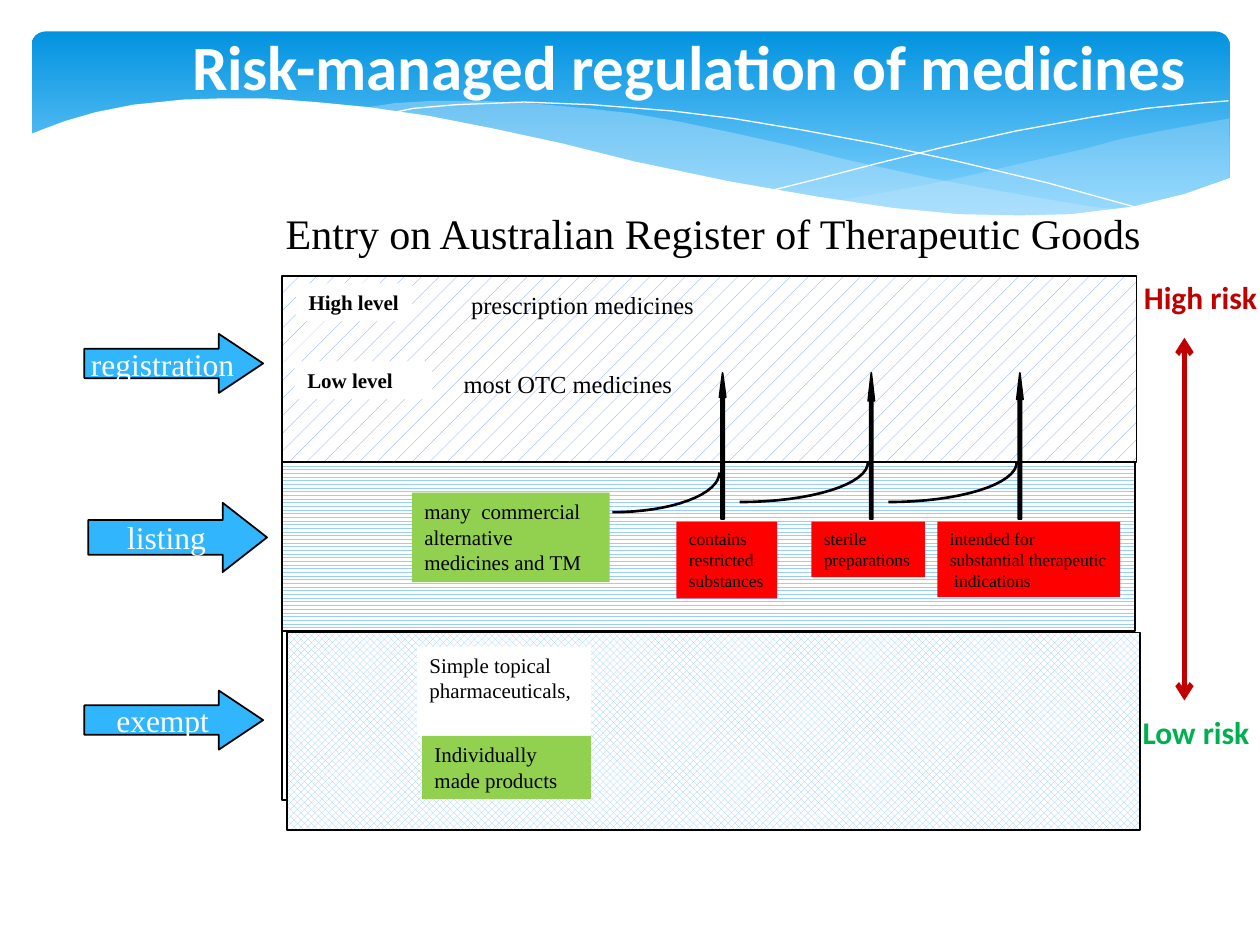
import math

from lxml import etree
from pptx import Presentation
from pptx import util as u
from pptx.dml.color import RGBColor
from pptx.enum import dml, shapes, text
from pptx.oxml.ns import qn

Pt = u.Pt
COLOURS = {
    "white": "FFFFFF", "black": "000000", "banner_top": "0293E0",
    "banner_bottom": "83D3FE", "wave": "C6E7FC", "arrow": "31B6FD",
    "blue_line": "6699FF", "pale_blue": "99CCFF", "green": "92D050",
    "red": "FF0000", "high_risk": "C00000", "low_risk": "00B050",
}
SERIF, SANS = "Times New Roman", "Calibri"

WAVE_RIGHT = [
    (702.5, 67.7), (682.6, 71.3), (663.1, 74.9), (641.5, 79.2), (619.9, 85),
    (579.6, 94.3), (542.2, 103), (508.3, 109.4), (475.9, 115.2), (497.5, 118.1),
    (527, 121), (553.7, 123.1), (578.2, 123.8), (601.2, 123.8), (627.8, 121.7),
    (651.6, 117.4), (673.2, 112.3), (702.7, 101.5)]
WAVE_MIDDLE = [
    (643, 120.2), (623.5, 118.1), (581, 110.9), (533.5, 102.2), (481, 90.7),
    (452.9, 83.5), (420.5, 76.3), (389.5, 69.8), (361.4, 64.8), (334.8, 61.9),
    (302.4, 59), (273.6, 57.6), (247.7, 57.6), (225.4, 59), (205.9, 61.9),
    (232.6, 64.8), (260.6, 69.8), (290.9, 76.3), (323.3, 83.5), (381.6, 97.2),
    (420.5, 105.1), (456.5, 112.3), (489.6, 117.4), (519.8, 121), (547.9, 123.1),
    (573.1, 124.6), (596.2, 124.6), (617, 123.1)]
WAVE_FRONT = [
    (703.4, 101.5), (676.8, 110.9), (647.3, 118.1), (612, 122.4), (582.5, 123.1),
    (547.9, 122.4), (509.8, 118.8), (466.6, 112.3), (416.9, 103.7), (362.2, 92.2),
    (321.8, 82.1), (281.5, 73.4), (244.8, 66.2), (210.2, 61.2), (180, 58.3),
    (151.9, 56.2), (127.4, 56.2), (105.1, 56.9), (76.3, 59.8), (54.7, 64.1),
    (37.4, 69.1), (25.9, 73.4), (16.6, 77), (16.6, 161.3), (703.4, 161.3)]
THREAD_FALLING = [
    (222.5, 64.8), (236.2, 61.9), (261.4, 59.8), (299.5, 58.3), (337.7, 59.8),
    (383.8, 63.4), (419, 67.7), (457.9, 74.2), (500.4, 82.1), (547.2, 92.2),
    (598.3, 104.4), (653, 119.5)]
THREAD_RISING = [
    (441.4, 108.7), (470.2, 101.5), (500.4, 93.6), (538.6, 84.2), (580.3, 74.9),
    (623.5, 67), (655.2, 61.9), (684.7, 59), (702, 57.6)]


def rgb(name):
    return RGBColor.from_string(COLOURS[name])


def paint(shape, fill=None, line=None, width=1):
    shape.shadow.inherit = False
    if fill:
        shape.fill.solid()
        shape.fill.fore_color.rgb = rgb(fill)
    else:
        shape.fill.background()
    if line:
        shape.line.color.rgb = rgb(line)
        shape.line.width = Pt(width)
    else:
        shape.line.fill.background()


def add_block(slide, kind, box, **look):
    block = slide.shapes.add_shape(kind, *map(Pt, box))
    paint(block, **look)
    return block


def add_outline(slide, points, closed=False, alpha=None, **look):
    (start, *rest) = [(Pt(x), Pt(y)) for x, y in points]
    builder = slide.shapes.build_freeform(*start)
    builder.add_line_segments(rest, close=closed)
    outline = builder.convert_to_shape()
    paint(outline, **look)
    if alpha:
        colour = outline.fill._xPr.find(qn("a:solidFill"))[0]
        etree.SubElement(colour, qn("a:alpha")).set("val", str(alpha * 1000))


def write(shape, words, size, colour="black", font=SERIF, bold=False, wrap=True,
          grow=True, align=text.PP_ALIGN.LEFT, anchor=text.MSO_ANCHOR.TOP):
    frame = shape.text_frame
    frame.text = words
    frame.word_wrap = wrap
    frame.vertical_anchor = anchor
    frame.auto_size = (text.MSO_AUTO_SIZE.SHAPE_TO_FIT_TEXT if grow
                       else text.MSO_AUTO_SIZE.NONE)
    for paragraph in frame.paragraphs:
        paragraph.alignment = align
        for run in paragraph.runs:
            run.font.size = Pt(size)
            run.font.name = font
            run.font.bold = bold
            run.font.color.rgb = rgb(colour)


def add_label(slide, box, words, size, fill=None, **style):
    if fill:
        label = add_block(slide, shapes.MSO_SHAPE.RECTANGLE, box, fill=fill)
    else:
        label = slide.shapes.add_textbox(*map(Pt, box))
    write(label, words, size, **style)


def add_band(slide, box, pattern, ink):
    band = add_block(slide, shapes.MSO_SHAPE.RECTANGLE, box, line="black")
    band.fill.patterned()
    band.fill.pattern = pattern
    band.fill.fore_color.rgb = rgb(ink)
    band.fill.back_color.rgb = rgb("white")


def add_route(slide, box, words, head):
    route = add_block(slide, shapes.MSO_SHAPE.RIGHT_ARROW, box,
                      fill="arrow", line="black")
    route.adjustments[1] = head
    write(route, words, 18, colour="white", wrap=False, grow=False,
          align=text.PP_ALIGN.CENTER, anchor=text.MSO_ANCHOR.MIDDLE)


def add_upgrade(slide, left, head):
    stem = add_block(slide, shapes.MSO_SHAPE.UP_ARROW, (left, 213.1, 3.6, 83.5),
                     fill="black", line="black")
    stem.adjustments[1] = head


def add_curve(slide, left, top, width, height, steps=16):
    angles = [math.pi / 2 * step / steps for step in range(steps + 1)]
    add_outline(slide, [(left + width * math.sin(a), top + height * math.cos(a))
                        for a in angles], line="black", width=1.5)


def add_banner(slide):
    banner = add_block(slide, shapes.MSO_SHAPE.ROUNDED_RECTANGLE,
                       (18, 18, 684.7, 112.3))
    banner.adjustments[0] = 0.071
    banner.fill.gradient()
    banner.fill.gradient_angle = 270
    for stop, colour, position in zip(banner.fill.gradient_stops,
                                      ("banner_top", "banner_bottom"), (0, 0.9)):
        stop.color.rgb = rgb(colour)
        stop.position = position
    add_outline(slide, WAVE_RIGHT, closed=True, fill="wave", alpha=29)
    add_outline(slide, WAVE_MIDDLE, closed=True, fill="wave", alpha=40)
    for thread in (THREAD_FALLING, THREAD_RISING):
        add_outline(slide, thread, line="white", width=0)
    add_outline(slide, WAVE_FRONT, closed=True, fill="white")


def add_risk_scale(slide):
    scale = slide.shapes.add_connector(shapes.MSO_CONNECTOR.STRAIGHT,
                                       Pt(676.8), Pt(193), Pt(676.8), Pt(400.3))
    scale.line.color.rgb = rgb("high_risk")
    scale.line.width = Pt(3)
    for end in ("a:headEnd", "a:tailEnd"):
        etree.SubElement(scale.line._get_or_add_ln(), qn(end)).set("type", "arrow")
    etree.SubElement(scale._element.spPr, qn("a:effectLst"))


def main():
    deck = Presentation()
    deck.slide_width, deck.slide_height = Pt(720), Pt(540)
    slide = deck.slides.add_slide(deck.slide_layouts[6])
    pattern = dml.MSO_PATTERN

    add_banner(slide)
    add_block(slide, shapes.MSO_SHAPE.RECTANGLE, (161.3, 360.7, 447.8, 96.5),
              line="black")
    add_band(slide, (161.3, 264.2, 487.4, 96.5), pattern.ZIG_ZAG, "pale_blue")
    add_band(slide, (161.3, 157.7, 488.2, 106.5), pattern.PERCENT_5, "blue_line")
    add_band(slide, (164.2, 361.4, 487.4, 113), pattern.LARGE_CHECKER_BOARD,
             "pale_blue")

    add_label(slide, (169.2, 162, 66.2, 21.6), "High level", 12, "white",
              bold=True, wrap=False)
    add_label(slide, (168.5, 206.6, 78.5, 21.6), "Low level", 12, "white", bold=True)
    add_label(slide, (262.1, 162, 143.3, 24.5), "prescription medicines", 14)
    add_label(slide, (257.8, 207.4, 136.1, 24.5), "most OTC medicines", 14)
    add_label(slide, (235.4, 281.5, 113, 51.1),
              "many  commercial alternative medicines and TM", 12, "green")
    add_label(slide, (238.3, 369.4, 99.4, 51.1),
              "Simple topical\npharmaceuticals,", 12, "white")
    add_label(slide, (241.2, 420.5, 96.5, 36), "Individually made products", 12,
              "green")
    for left, width, height, words in (
            (386.6, 57.6, 43.9, "contains\nrestricted\nsubstances"),
            (463.7, 64.8, 31.7, "sterile\npreparations"),
            (535.7, 104.4, 43.2,
             "intended for\nsubstantial therapeutic\n indications")):
        add_label(slide, (left, 298.1, width, height), words, 10, "red", wrap=False)

    for left, top, height, words, head in (
            (48.2, 190.8, 33.8, "registration", 0.75),
            (50.4, 287.3, 39.6, "listing", 0.64),
            (48.2, 394.6, 33.8, "exempt", 0.75)):
        add_route(slide, (left, top, 102.2, height), words, head)

    for curve in ((349.9, 270, 61.2, 22.7), (422.6, 264.2, 73.4, 22.7),
                  (507.6, 264.2, 73.4, 22.7)):
        add_curve(slide, *curve)
    for left, head in ((411.1, 3.86), (496.1, 4.44), (581, 4.2)):
        add_upgrade(slide, left, head)

    add_label(slide, (67.7, -7.9, 652.3, 90), "Risk-managed regulation of medicines",
              36, colour="white", font=SANS, bold=True, grow=False,
              align=text.PP_ALIGN.CENTER, anchor=text.MSO_ANCHOR.MIDDLE)
    add_label(slide, (156.2, 115.2, 504.7, 36),
              "Entry on Australian Register of Therapeutic Goods", 24)
    add_label(slide, (646.6, 155.5, 93.6, 28.8), "High risk", 18,
              colour="high_risk", font=SANS, bold=True)
    add_label(slide, (645.8, 403.9, 94.3, 28.8), "Low risk", 18,
              colour="low_risk", font=SANS, bold=True)
    add_risk_scale(slide)
    deck.save("out.pptx")


if __name__ == "__main__":
    main()
